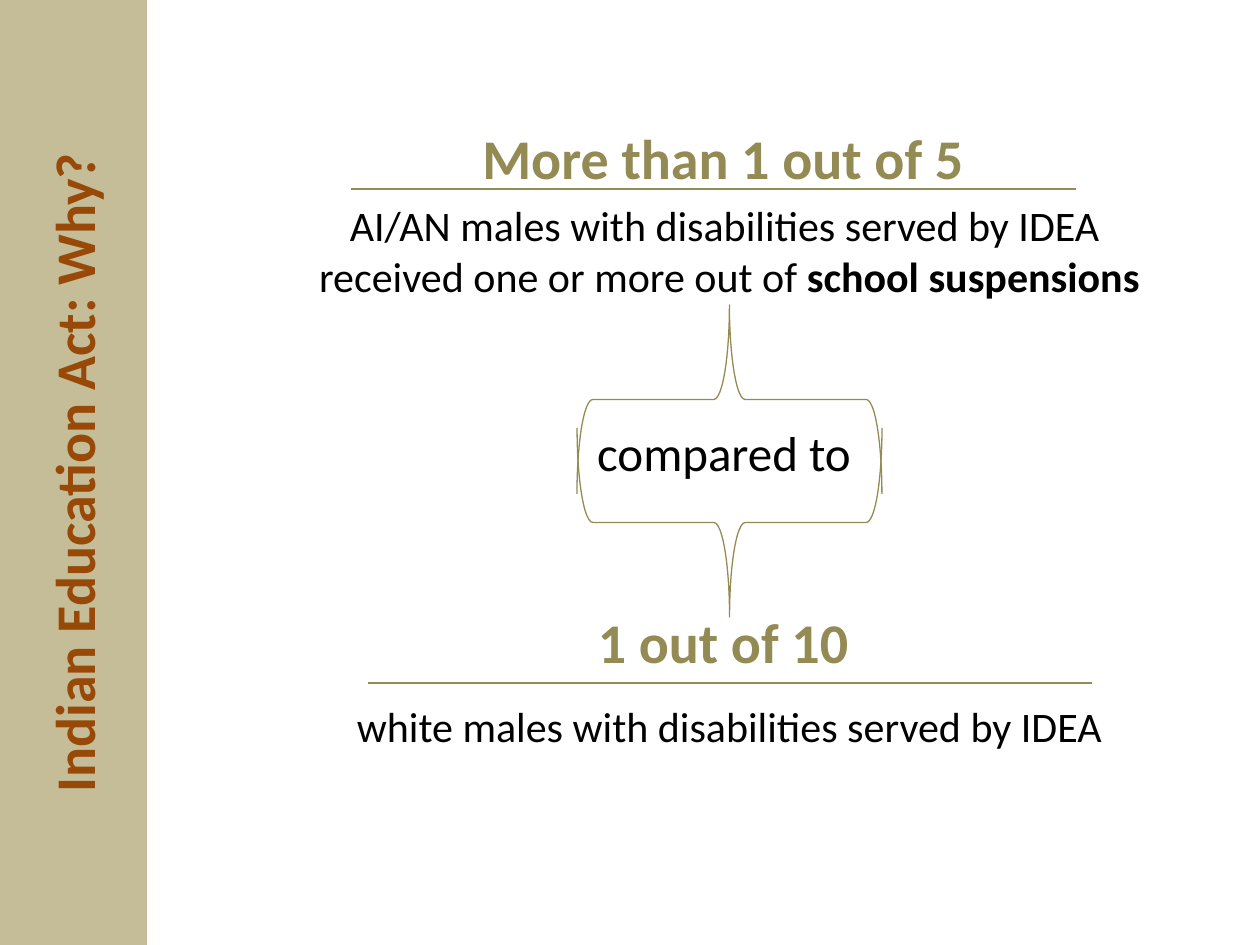
from typing import NamedTuple

from lxml import etree
from pptx import Presentation
from pptx.dml.color import RGBColor
from pptx.enum.shapes import MSO_CONNECTOR, MSO_SHAPE
from pptx.enum.text import MSO_ANCHOR, PP_ALIGN
from pptx.oxml.ns import qn
from pptx.util import Emu, Pt

RECT, BRACE = MSO_SHAPE.RECTANGLE, MSO_SHAPE.RIGHT_BRACE
STRAIGHT = MSO_CONNECTOR.STRAIGHT
TOP, MIDDLE = MSO_ANCHOR.TOP, MSO_ANCHOR.MIDDLE
CENTER = PP_ALIGN.CENTER
FONT = "Calibri"
OLIVE, TAN, RUST, BLACK = "948A54", "C4BD97", "984807", "000000"
SCALE = 914400 / 126


class Style(NamedTuple):
    size: int
    color: str
    bold: bool = False


class Run(NamedTuple):
    text: str
    style: Style


class Para(NamedTuple):
    runs: list[Run]
    space: int = 0
    lead: float = 1.0


class Box(NamedTuple):
    left: int
    top: int
    width: int
    height: int
    turn: int = 0


class Rule(NamedTuple):
    left: int
    right: int
    y: int


HEAD = Style(32, OLIVE, True)
BODY = Style(24, BLACK)
STRONG = Style(24, BLACK, True)
LINK = Style(28, BLACK)
TITLE = Style(32, RUST, True)

FACTS = [
    Para([Run("More than 1 out of 5 ", HEAD)], lead=1.5),
    Para([
        Run("AI/AN males with disabilities served by IDEA \n"
            "received one or more out of ", BODY),
        Run("school suspensions", STRONG),
    ], space=5),
    Para([Run("compared to ", LINK)], space=53, lead=1.5),
    Para([
        Run("1 out of 10 \n", HEAD),
        Run("white males with disabilities served by IDEA", BODY),
    ], space=53, lead=1.5),
]
BRACES = [Box(635, 370, 189, 305, 90), Box(635, 247, 189, 305, 270)]
RULES = [Rule(351, 1076, 189), Rule(368, 1092, 683)]


def px(n: int) -> Emu:
    return Emu(round(n * SCALE))


def rgb(code: str) -> RGBColor:
    return RGBColor.from_string(code)


def set_font(font, style: Style) -> None:
    font.name = FONT
    font.size = Pt(style.size)
    font.bold = style.bold
    font.color.rgb = rgb(style.color)


def add_para(para, item: Para) -> None:
    para.alignment = CENTER
    para.line_spacing = item.lead
    if item.space:
        para.space_before = Pt(item.space)
    same = len({run.style for run in item.runs}) == 1
    if same:
        set_font(para.font, item.runs[0].style)
    for run in item.runs:
        for i, text in enumerate(run.text.split("\n")):
            if i:
                para.add_line_break()
            if text:
                part = para.add_run()
                part.text = text
                if not same:
                    set_font(part.font, run.style)


def add_text(slide, box: Box, items: list[Para], anchor=TOP) -> None:
    shape = slide.shapes.add_textbox(*map(px, box[:4]))
    shape.rotation = box.turn
    frame = shape.text_frame
    frame.word_wrap = True
    frame.vertical_anchor = anchor
    for i, item in enumerate(items):
        add_para(frame.add_paragraph() if i else frame.paragraphs[0], item)


def add_brace(slide, box: Box) -> None:
    shape = slide.shapes.add_shape(BRACE, *map(px, box[:4]))
    shape.rotation = box.turn
    shape.shadow.inherit = False
    shape.fill.background()
    shape.line.color.rgb = rgb(OLIVE)
    shape.line.width = Pt(0.75)


def add_band(slide, box: Box) -> None:
    shape = slide.shapes.add_shape(RECT, *map(px, box[:4]))
    shape.shadow.inherit = False
    shape.fill.solid()
    shape.fill.fore_color.rgb = rgb(TAN)
    shape.line.fill.background()


def add_rule(slide, rule: Rule) -> None:
    line = slide.shapes.add_connector(
        STRAIGHT, px(rule.left), px(rule.y), px(rule.right), px(rule.y))
    line.line.color.rgb = rgb(OLIVE)
    line.line.width = Pt(0.75)
    etree.SubElement(line._element.spPr, qn("a:effectLst"))


def main() -> None:
    deck = Presentation()
    deck.slide_width, deck.slide_height = px(1260), px(945)
    slide = deck.slides.add_slide(deck.slide_layouts[6])
    add_text(slide, Box(278, 84, 903, 336), FACTS)
    for brace in BRACES:
        add_brace(slide, brace)
    add_band(slide, Box(0, 0, 147, 945))
    add_text(slide, Box(-378, 415, 903, 116, 270),
             [Para([Run("Indian Education Act: Why?", TITLE)])], MIDDLE)
    for rule in RULES:
        add_rule(slide, rule)
    deck.save("out.pptx")


if __name__ == "__main__":
    main()
